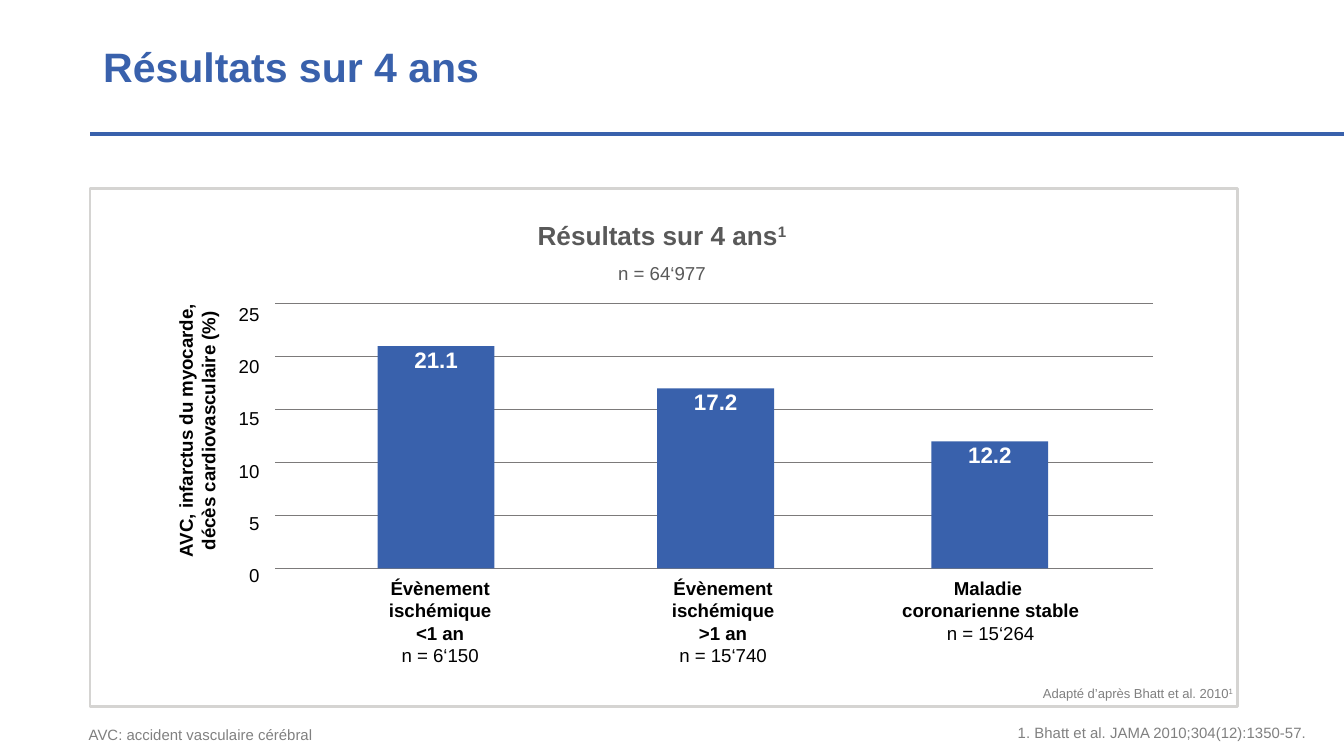
import pptx
import pptx.util
import pptx.dml.color
import pptx.enum.shapes
import pptx.enum.text
import pptx.oxml.ns
from lxml import etree

Inches = pptx.util.Inches
Pt = pptx.util.Pt
Shape = pptx.enum.shapes.MSO_SHAPE
Align = pptx.enum.text.PP_ALIGN
Anchor = pptx.enum.text.MSO_ANCHOR
Fit = pptx.enum.text.MSO_AUTO_SIZE
qn = pptx.oxml.ns.qn

BLUE, GREY, DARK, PALE = "3961AC", "7C7A7A", "595959", "808080"
LEFT, RIGHT = 2.05, 8.58      # plot edges
TOP, BASE = 2.26, 4.23
PEAK, STEP = 25, 5            # axis maximum and interval

# Bar left, value, label left, label width, label lines
BARS = [
    (2.81, 21.1, 2.56, 1.43, "Évènement ischémique\n<1 an\nn = 6‘150"),
    (4.89, 17.2, 4.70, 1.36, "Évènement ischémique\n>1 an\nn = 15‘740"),
    (6.93, 12.2, 6.59, 1.56, "Maladie \ncoronarienne stable\nn = 15‘264"),
]


def color(code):
    return pptx.dml.color.RGBColor.from_string(code)


def add_line(slide, x1, x2, y, code, width):
    line = slide.shapes.add_connector(
        pptx.enum.shapes.MSO_CONNECTOR.STRAIGHT,
        Inches(x1), Inches(y), Inches(x2), Inches(y))
    line.line.color.rgb = color(code)
    line.line.width = Pt(width)
    etree.SubElement(line._element.spPr, qn("a:effectLst"))


def add_box(slide, kind, x, y, w, h, fill=None, edge=None):
    box = slide.shapes.add_shape(kind, Inches(x), Inches(y), Inches(w), Inches(h))
    box.shadow.inherit = False
    if fill:
        box.fill.solid()
        box.fill.fore_color.rgb = color(fill)
    else:
        box.fill.background()
    if edge:
        box.line.color.rgb = color(edge)
        box.line.width = Pt(1.5)
    else:
        box.line.fill.background()
    return box


def style(run, size, code, bold):
    run.font.name = "Arial"
    run.font.size = Pt(size)
    run.font.bold = bold
    run.font.color.rgb = color(code)


def add_text(slide, x, y, w, h, text, size, code, bold=False, align=Align.LEFT,
             anchor=Anchor.TOP, inset=0, space=None, note=None):
    """Add a text box; note is a superscript set after the text."""
    box = slide.shapes.add_textbox(Inches(x), Inches(y), Inches(w), Inches(h))
    frame = box.text_frame
    frame.word_wrap = True
    frame.vertical_anchor = anchor
    if anchor == Anchor.BOTTOM:
        frame.auto_size = Fit.SHAPE_TO_FIT_TEXT
    frame.margin_left = frame.margin_right = Inches(inset)
    frame.margin_top = frame.margin_bottom = Inches(inset / 2)
    frame.text = text
    if note:
        run = frame.paragraphs[-1].add_run()
        run.text = note
        run._r.get_or_add_rPr().set("baseline", "30000")
    for para in frame.paragraphs:
        para.alignment = align
        if space:
            para.line_spacing = space
        for run in para.runs:
            style(run, size, code, bold)
    return frame


def add_label(slide, x, w, text):
    """Category label: bold name, plain count on the last line."""
    frame = add_text(slide, x, 4.29, w, 0.73, "", 10, "000000")
    para = frame.paragraphs[0]
    para.text = text
    para.alignment = Align.CENTER
    for run in para.runs:
        style(run, 10, "000000", True)
    para.runs[-1].font.bold = False
    for gap in para._p.findall(qn("a:br")):
        etree.SubElement(gap, qn("a:rPr"), sz="1000")


def add_plot(slide):
    unit = (BASE - TOP) / PEAK

    # Grid and axis
    ticks = range(PEAK, -1, -STEP)
    for tick in ticks:
        add_line(slide, LEFT, RIGHT, BASE - tick * unit, GREY, 0.75 if tick else 1)
    add_text(slide, 1.69, 2.03, 0.24, 2.6, "\n".join(map(str, ticks)), 10,
             "000000", align=Align.RIGHT, space=Pt(28))
    frame = add_text(slide, 1.29, 2.18, 0.34, 2.05,
                     "AVC, infarctus du myocarde, décès cardiovasculaire (%)",
                     10, "000000", True, Align.CENTER, Anchor.BOTTOM)
    frame._txBody.bodyPr.set("vert", "vert270")

    # Bars are drawn to whole percents, values are shown in full
    for x, value, left, width, text in BARS:
        high = int(value) * unit
        add_box(slide, Shape.RECTANGLE, x, BASE - high, 0.87, high, BLUE)
        add_text(slide, x + 0.04, BASE - high, 0.79, 0.24, str(value), 12,
                 "FFFFFF", True, Align.CENTER)
        add_label(slide, left, width, text)


def main():
    deck = pptx.Presentation()
    deck.slide_width = Inches(10)
    deck.slide_height = deck.slide_width * 9 // 16
    slide = deck.slides.add_slide(deck.slide_layouts[6])

    # Heading
    add_line(slide, 0.67, 10, 1, BLUE, 2.25)
    add_text(slide, 0.67, 0.3, 9.06, 0.67, "Résultats sur 4 ans", 22, BLUE, True,
             inset=0.1, space=0.9)

    # Panel and its titles
    panel = add_box(slide, Shape.ROUNDED_RECTANGLE, 0.67, 1.4, 8.54, 3.86,
                    edge="D5D4D2")
    panel.adjustments[0] = 0
    add_text(slide, 0.67, 1.63, 8.51, 0.31, "Résultats sur 4 ans", 14, DARK, True,
             Align.CENTER, note="1")
    add_text(slide, 0.67, 1.95, 8.51, 0.31, "n = 64‘977", 10, DARK,
             align=Align.CENTER)
    add_plot(slide)

    # Source and footnotes
    add_text(slide, 7.76, 5.1, 1.65, 0.23, "Adapté d’après Bhatt et al. 2010", 7,
             PALE, note="1")
    add_text(slide, 0.66, 5.4, 4.2, 0.13, "AVC: accident vasculaire cérébral", 8,
             PALE, anchor=Anchor.BOTTOM)
    add_text(slide, 5.47, 5.39, 4.25, 0.13,
             "1. Bhatt et al. JAMA 2010;304(12):1350-57.", 8, PALE,
             align=Align.RIGHT, anchor=Anchor.BOTTOM)

    deck.save("out.pptx")


if __name__ == "__main__":
    main()
